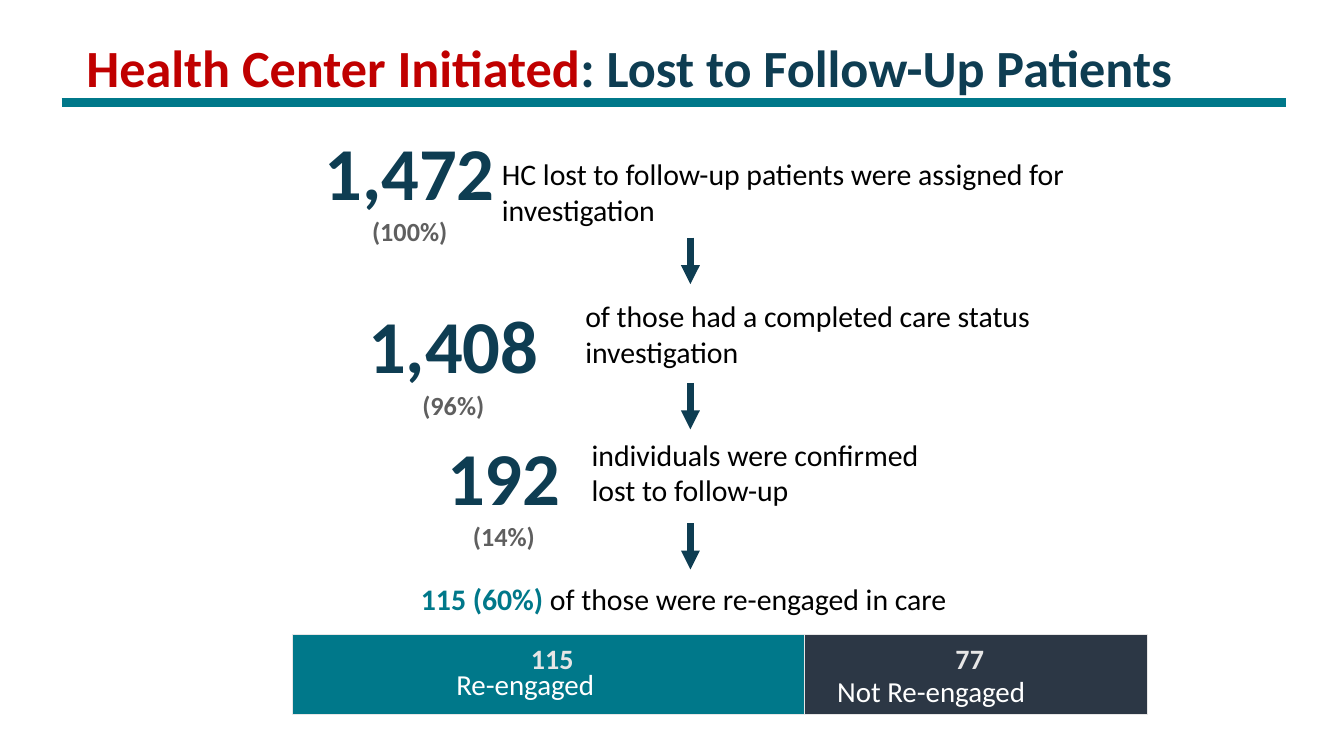
from dataclasses import dataclass

from lxml import etree
from pptx import Presentation
from pptx.chart.data import CategoryChartData
from pptx.dml.color import RGBColor
from pptx.enum.chart import XL_CHART_TYPE
from pptx.enum.shapes import MSO_CONNECTOR
from pptx.enum.text import MSO_ANCHOR, PP_ALIGN
from pptx.oxml import parse_xml
from pptx.oxml.ns import nsdecls, qn
from pptx.slide import Slide
from pptx.util import Cm, Pt

BAR_STACKED_100 = XL_CHART_TYPE.BAR_STACKED_100
STRAIGHT = MSO_CONNECTOR.STRAIGHT
TOP, MIDDLE, BOTTOM = MSO_ANCHOR.TOP, MSO_ANCHOR.MIDDLE, MSO_ANCHOR.BOTTOM
LEFT, CENTER = PP_ALIGN.LEFT, PP_ALIGN.CENTER


@dataclass(frozen=True)
class Theme:
    font: str = "Calibri"
    navy: str = "0E3D52"
    teal: str = "00788A"
    slate: str = "2C3745"
    red: str = "C00000"
    gray: str = "5F5F5F"
    pale: str = "E7E6E6"
    black: str = "000000"
    white: str = "FFFFFF"
    title_size: float = 37.3
    count_size: float = 53.3
    percent_size: float = 18.7
    body_size: float = 21.3
    caption_size: float = 20.7
    value_size: float = 20
    chart_size: float = 10


THEME = Theme()


@dataclass(frozen=True)
class Box:
    left: float
    top: float
    width: float
    height: float


@dataclass(frozen=True)
class TextRun:
    text: str
    size: float
    color: str
    bold: bool = False


@dataclass(frozen=True)
class Step:
    count: str
    percent: str
    count_box: Box
    lines: tuple[str, ...]
    lines_box: Box
    anchor: MSO_ANCHOR
    arrow_top: float


@dataclass(frozen=True)
class Segment:
    name: str
    patients: int
    color: str
    label_shift: float
    caption: str
    caption_box: Box


STEPS = (
    Step("1,472", "(100%)", Box(5.84, 3.05, 8.97, 3.63),
         ("HC lost to follow-up patients were assigned for investigation",),
         Box(12.4, 3.33, 16.56, 3), MIDDLE, 5.99),
    Step("1,408", "(96%)", Box(8.2, 7.42, 6.45, 2.21),
         ("of those had a completed care status investigation",),
         Box(14.5, 7.14, 12.09, 2.54), MIDDLE, 9.65),
    Step("192", "(14%)", Box(8.84, 10.74, 7.72, 2.44),
         ("individuals were confirmed", "lost to follow-up"),
         Box(14.66, 10.87, 11.25, 2.26), TOP, 13.18),
)
SEGMENTS = (
    Segment("Series 1", 115, THEME.teal, 0.004,
            "Re-engaged", Box(11.25, 16.66, 5.18, 1.14)),
    Segment("Series 2", 77, THEME.slate, -0.007,
            "Not Re-engaged", Box(20.85, 16.84, 5.79, 1.14)),
)
CHART_BOX = Box(6.86, 14.25, 22.58, 6.05)
LABEL_RISE = -0.06
ARROW_X, ARROW_LENGTH = 17.4, 1.17


def add_text(slide: Slide, box: Box, paragraphs: list[list[TextRun]],
             alignment: PP_ALIGN = LEFT, anchor: MSO_ANCHOR = TOP,
             line_spacing: float | None = None) -> None:
    shape = slide.shapes.add_textbox(
        Cm(box.left), Cm(box.top), Cm(box.width), Cm(box.height))
    frame = shape.text_frame
    frame.word_wrap = True
    frame.vertical_anchor = anchor
    for index, text_runs in enumerate(paragraphs):
        paragraph = frame.add_paragraph() if index else frame.paragraphs[0]
        paragraph.alignment = alignment
        if line_spacing:
            paragraph.line_spacing = Pt(line_spacing)
        for text_run in text_runs:
            run = paragraph.add_run()
            run.text = text_run.text
            style_font(run.font, text_run.size, text_run.color, text_run.bold)


def style_font(font, size: float, color: str, bold: bool = False) -> None:
    font.name = THEME.font
    font.size = Pt(size)
    font.bold = bold
    font.color.rgb = RGBColor.from_string(color)


def add_line(slide: Slide, start: tuple[float, float], end: tuple[float, float],
             color: str, width: float, arrow: bool = False) -> None:
    connector = slide.shapes.add_connector(
        STRAIGHT, Cm(start[0]), Cm(start[1]), Cm(end[0]), Cm(end[1]))
    connector.line.color.rgb = RGBColor.from_string(color)
    connector.line.width = Pt(width)
    properties = connector.element.spPr
    if arrow:
        etree.SubElement(properties.find(qn("a:ln")), qn("a:tailEnd"), type="triangle")
    etree.SubElement(properties, qn("a:effectLst"))


def add_step(slide: Slide, step: Step) -> None:
    add_text(slide, step.count_box,
             [[TextRun(step.count, THEME.count_size, THEME.navy, True)],
              [TextRun(step.percent, THEME.percent_size, THEME.gray, True)]], CENTER)
    add_text(slide, step.lines_box,
             [[TextRun(line, THEME.body_size, THEME.black)] for line in step.lines],
             anchor=step.anchor)
    add_line(slide, (ARROW_X, step.arrow_top),
             (ARROW_X, step.arrow_top + ARROW_LENGTH), THEME.navy, 4.5, True)


def manual_layout(**values: str | float):
    entries = "".join(f'<c:{name} val="{value}"/>' for name, value in values.items())
    return parse_xml(f'<c:layout {nsdecls("c")}><c:manualLayout>{entries}'
                     "</c:manualLayout></c:layout>")


def add_engagement_chart(slide: Slide) -> None:
    data = CategoryChartData()
    data.categories = ["1"]
    for segment in SEGMENTS:
        data.add_series(segment.name, [segment.patients])
    chart = slide.shapes.add_chart(
        BAR_STACKED_100, Cm(CHART_BOX.left), Cm(CHART_BOX.top),
        Cm(CHART_BOX.width), Cm(CHART_BOX.height), data).chart
    chart.has_title = False
    chart.has_legend = False
    style_font(chart.font, THEME.chart_size, THEME.black)
    for axis in (chart.category_axis, chart.value_axis):
        axis.has_major_gridlines = False
        axis.visible = False
    plot = chart.plots[0]
    plot.gap_width = 150
    plot.overlap = 100
    plot.vary_by_categories = False

    for series, segment in zip(plot.series, SEGMENTS):
        series.format.fill.solid()
        series.format.fill.fore_color.rgb = RGBColor.from_string(segment.color)
        series.format.line.color.rgb = RGBColor.from_string(THEME.pale)
        series.format.line.width = Pt(0.75)
        labels = series.data_labels
        labels.show_value = True
        style_font(labels.font, THEME.value_size, THEME.pale, True)
        style_font(series.points[0].data_label.font, THEME.value_size, THEME.pale, True)
        label = labels._element.find(qn("c:dLbl"))
        label.find(qn("c:idx")).addnext(
            manual_layout(x=segment.label_shift, y=LABEL_RISE))

    chart_element = chart.element.find(qn("c:chart"))
    plot_area = chart_element.find(qn("c:plotArea"))
    for layout in plot_area.findall(qn("c:layout")):
        plot_area.remove(layout)
    plot_area.insert(0, manual_layout(
        layoutTarget="inner", xMode="edge", yMode="edge",
        x=0.023, y=0.039, w=0.954, h=0.829))
    chart_element.addnext(parse_xml(
        f'<c:spPr {nsdecls("c", "a")}><a:noFill/><a:ln><a:noFill/></a:ln></c:spPr>'))


def main() -> None:
    presentation = Presentation()
    presentation.slide_width = Cm(33.87)
    presentation.slide_height = Cm(19.05)
    slide = presentation.slides.add_slide(presentation.slide_layouts[6])
    for step in STEPS:
        add_step(slide, step)
    add_text(slide, Box(10.36, 14.5, 15.54, 1.45),
             [[TextRun("115 (60%) ", THEME.body_size, THEME.teal, True),
               TextRun("of those were re-engaged in care", THEME.body_size, THEME.black)]])
    add_engagement_chart(slide)
    for segment in SEGMENTS:
        add_text(slide, segment.caption_box,
                 [[TextRun(segment.caption, THEME.caption_size, THEME.white)]])
    add_line(slide, (1.55, 2.59), (32.41, 2.59), THEME.teal, 6.25)
    add_text(slide, Box(1.93, 0.36, 30.48, 2.24),
             [[TextRun("Health Center Initiated", THEME.title_size, THEME.red, True),
               TextRun(": Lost to Follow-Up Patients", THEME.title_size, THEME.navy, True)]],
             anchor=BOTTOM, line_spacing=40)
    presentation.save("out.pptx")


if __name__ == "__main__":
    main()
